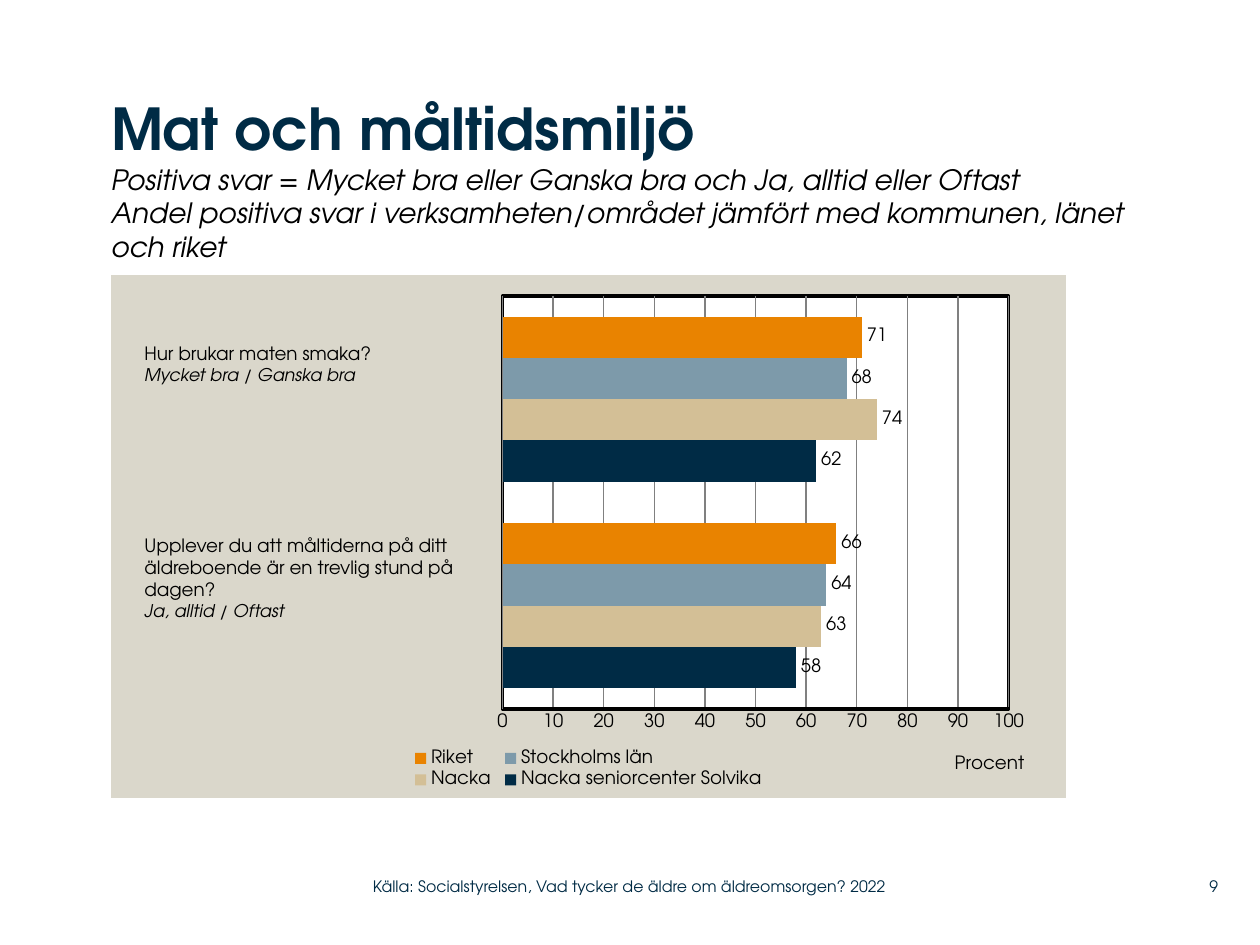
from dataclasses import dataclass
from lxml import etree
from pptx import Presentation
from pptx.chart.data import CategoryChartData
from pptx.dml.color import RGBColor
from pptx.enum.chart import XL_CHART_TYPE, XL_LABEL_POSITION, XL_LEGEND_POSITION, XL_TICK_MARK
from pptx.enum.text import MSO_ANCHOR, PP_ALIGN
from pptx.oxml import parse_xml
from pptx.oxml.ns import nsdecls, qn
from pptx.util import Emu, Pt

BAR = XL_CHART_TYPE.BAR_CLUSTERED
OUT_END = XL_LABEL_POSITION.OUTSIDE_END
BOTTOM = XL_LEGEND_POSITION.BOTTOM
NO_TICK = XL_TICK_MARK.NONE
TOP, MIDDLE = MSO_ANCHOR.TOP, MSO_ANCHOR.MIDDLE
LEFT, RIGHT = PP_ALIGN.LEFT, PP_ALIGN.RIGHT


@dataclass
class Theme:
    face: str = "TeX Gyre Adventor"
    navy: str = "002B45"
    black: str = "000000"
    white: str = "FFFFFF"
    panel: str = "DAD7CB"
    grid: str = "808080"
    sand: str = "D3BF96"
    steel: str = "7D9AAA"
    orange: str = "E98300"
    title: float = 33
    lead: float = 16
    text: float = 10.5
    note: float = 10
    foot: float = 9


def px(n):
    return Emu(round(n * 914400 / 126))


def paint(font, face, size, color, **style):
    values = {"name": face, "size": Pt(size), "bold": False, "italic": False, **style}
    for key, value in values.items():
        setattr(font, key, value)
    font.color.rgb = RGBColor.from_string(color)


def place(node, index, inner=False, **spots):
    """Give a chart part a manual layout, in shares of the chart."""
    for old in node.findall(qn("c:layout")):
        node.remove(old)
    layout = etree.Element(qn("c:layout"))
    manual = etree.SubElement(layout, qn("c:manualLayout"))
    tags = {"layoutTarget": "inner"} if inner else {}
    tags.update(xMode="edge", yMode="edge", **spots)
    for tag, value in tags.items():
        etree.SubElement(manual, qn("c:" + tag)).set("val", str(value))
    node.insert(index, layout)


def area(fill, line=None):
    """Make the fill and border of a chart area."""
    edge = f'<a:ln w="{Pt(2)}"><a:solidFill><a:srgbClr val="{line}"/></a:solidFill></a:ln>'
    if line is None:
        edge = "<a:ln><a:noFill/></a:ln>"
    return parse_xml(f'<c:spPr {nsdecls("c", "a")}><a:solidFill><a:srgbClr val="{fill}"/>'
                     f"</a:solidFill>{edge}</c:spPr>")


class Deck:
    def __init__(self, theme):
        self.theme = theme
        self.prs = Presentation()
        self.prs.slide_width, self.prs.slide_height = px(1260), px(945)
        self.slide = self.prs.slides.add_slide(self.prs.slide_layouts[5])

    def frame(self, shape, box, anchor, inset):
        for key, value in zip(("left", "top", "width", "height"), box):
            setattr(shape, key, px(value))
        frame = shape.text_frame
        frame.word_wrap, frame.vertical_anchor = True, anchor
        if inset == 0:
            for side in ("left", "top", "right", "bottom"):
                setattr(frame, "margin_" + side, 0)
        return frame

    def run(self, para, text, size, color, **style):
        run = para.add_run()
        run.text = text
        paint(run.font, self.theme.face, size, color, **style)

    def title(self, box, head, leads):
        t = self.theme
        para = self.frame(self.slide.shapes.title, box, TOP, 0).paragraphs[0]
        para.alignment = LEFT
        self.run(para, head, t.title, t.navy, bold=True)
        for lead in leads:
            para.add_line_break()
            self.run(para, lead, t.lead, t.black, italic=True)

    def label(self, box, lines, color, anchor=TOP, align=LEFT, inset=None):
        shape = self.slide.shapes.add_textbox(0, 0, 0, 0)
        frame = self.frame(shape, box, anchor, inset)
        for i, (text, size, slant) in enumerate(lines):
            para = frame.add_paragraph() if i else frame.paragraphs[0]
            para.alignment = align
            self.run(para, text, size, color, italic=slant)

    def chart(self, box, cats, rows, unit):
        t = self.theme
        data = CategoryChartData()
        data.categories = cats
        for name, values, _ in rows:
            data.add_series(name, values)
        chart = self.slide.shapes.add_chart(BAR, *map(px, box), data).chart
        paint(chart.font, t.face, t.text, t.black)
        chart.has_title = False

        # Bars and values
        plot = chart.plots[0]
        plot.gap_width, plot.overlap, plot.vary_by_categories = 100, 0, False
        for series, (_, _, color) in zip(plot.series, rows):
            series.format.fill.solid()
            series.format.fill.fore_color.rgb = RGBColor.from_string(color)
            labels = series.data_labels
            labels.show_value, labels.position = True, OUT_END
            paint(labels.font, t.face, t.text, t.black)

        # Axes
        chart.category_axis.visible = False
        axis = chart.value_axis
        values = {"minimum_scale": 0, "maximum_scale": 100, "major_unit": 10,
                  "major_tick_mark": NO_TICK, "minor_tick_mark": NO_TICK,
                  "has_major_gridlines": True}
        for key, value in values.items():
            setattr(axis, key, value)
        paint(axis.tick_labels.font, t.face, t.text, t.black)
        lines = ((axis.format.line, t.black, 2),
                 (axis.major_gridlines.format.line, t.grid, 0.75))
        for line, color, width in lines:
            line.color.rgb, line.width = RGBColor.from_string(color), Pt(width)
        para = axis.axis_title.text_frame.paragraphs[0]
        self.run(para, unit, t.text, t.black)
        place(axis.axis_title._element, 1, x=0.88, y=0.91)

        # Legend
        chart.has_legend = True
        legend = chart.legend
        legend.position, legend.include_in_layout = BOTTOM, False
        paint(legend.font, t.face, t.text, t.black)
        place(legend._element, 1, x=0.31, y=0.9, w=0.38, h=0.09)

        # Plot and panel areas
        body = chart.element.find(qn("c:chart"))
        region = body.find(qn("c:plotArea"))
        place(region, 0, inner=True, x=0.41, y=0.04, w=0.53, h=0.79)
        region.append(area(t.white, t.black))
        body.addnext(area(t.panel))


def main():
    t = Theme()
    deck = Deck(t)

    # Heading
    deck.title((111, 93, 1061, 181), "Mat och måltidsmiljö", (
        "Positiva svar = Mycket bra eller Ganska bra och Ja, alltid eller Oftast",
        "Andel positiva svar i verksamheten/området jämfört med kommunen, länet och riket"))

    # Chart
    deck.chart((111, 275, 955, 523), ("1", "2"), (
        ("Nacka seniorcenter Solvika", (58, 62), t.navy),
        ("Nacka", (63, 74), t.sand),
        ("Stockholms län", (64, 68), t.steel),
        ("Riket", (66, 71), t.orange)), "Procent")

    # Questions
    deck.label((132, 336, 349, 79), (
        ("Hur brukar maten smaka?", t.text, False),
        ("Mycket bra / Ganska bra", t.note, True)), t.black)
    deck.label((132, 528, 349, 123), (
        ("Upplever du att måltiderna på ditt äldreboende är en trevlig stund på", t.text, False),
        ("dagen?", t.text, False),
        ("Ja, alltid / Oftast", t.note, True)), t.black)

    # Footer
    source = "Källa: Socialstyrelsen, Vad tycker de äldre om äldreomsorgen? 2022"
    for left, width, text, align in ((373, 558, source, LEFT), (1159, 59, "9", RIGHT)):
        deck.label((left, 868, width, 37), ((text, t.foot, False),), t.navy, MIDDLE, align, 0)

    deck.prs.save("out.pptx")


if __name__ == "__main__":
    main()
